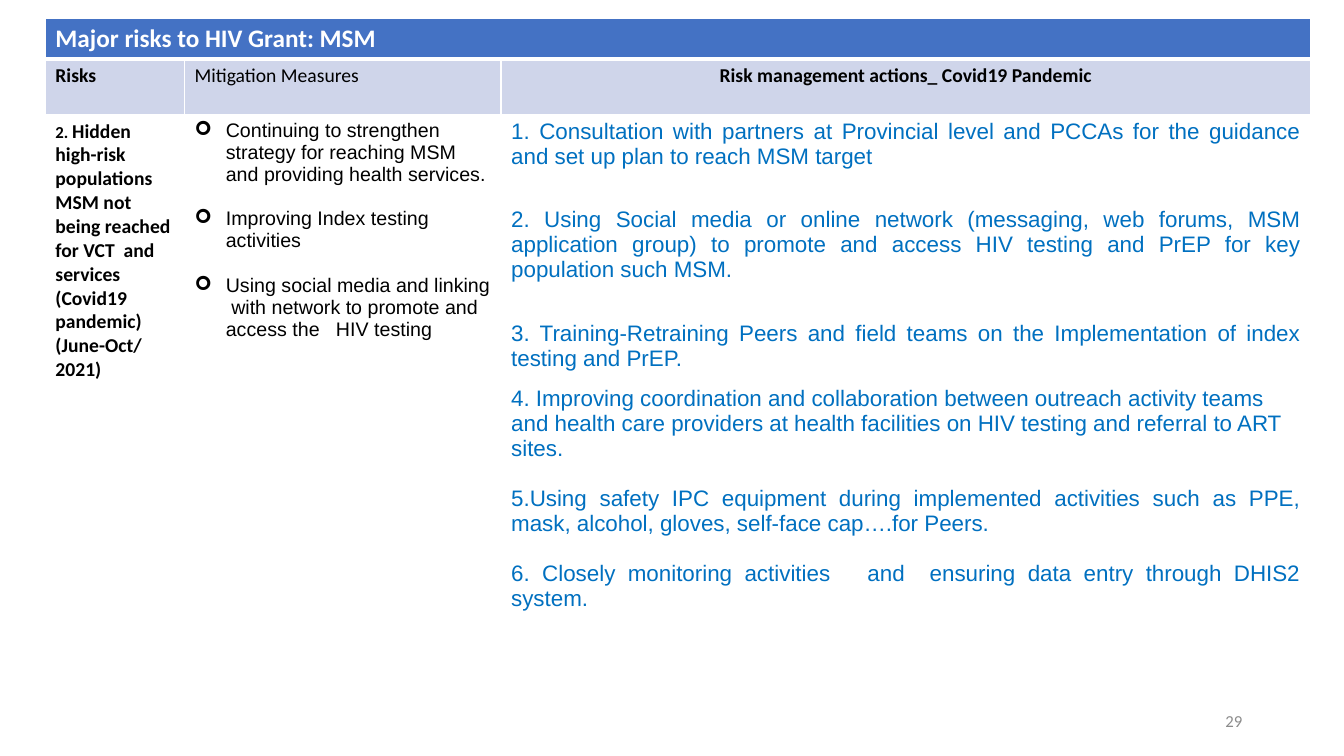
from dataclasses import dataclass
from typing import Optional

from lxml.etree import SubElement
from pptx import Presentation
from pptx.dml.color import RGBColor
from pptx.enum.text import MSO_ANCHOR as Anchor, PP_ALIGN as Align
from pptx.oxml.ns import qn
from pptx.util import Inches, Pt

COLORS = {
    "white": "FFFFFF",
    "black": "000000",
    "title": "4472C4",
    "heading": "CFD5EA",
    "action": "0070C0",
    "number": "8C8C8C",
}


@dataclass
class Line:
    text: str
    size: float = 14
    font: str = "Calibri"
    color: str = "black"
    bold: bool = False
    align: Align = Align.LEFT
    before: float = 0
    bullet: str = ""
    numbered: bool = False
    lead: str = ""  # smaller text in front


@dataclass
class Entry:
    row: int
    col: int
    lines: list[Line]
    fill: Optional[str] = None


def mitigation(text: str, before: float = 0) -> Line:
    return Line(text, font="Arial", before=before, bullet="➢")


def action(text: str, before: float = 0, align: Align = Align.JUSTIFY,
           numbered: bool = False) -> Line:
    return Line(text, 16, "Arial", "action", align=align, before=before, numbered=numbered)


ENTRIES = [
    Entry(0, 0, [Line("Major risks to HIV Grant: MSM", 18, color="white", bold=True)], "title"),
    Entry(1, 0, [Line("Risks", bold=True)], "heading"),
    Entry(1, 1, [Line("Mitigation Measures")], "heading"),
    Entry(1, 2, [Line("Risk management actions_ Covid19 Pandemic", bold=True,
                      align=Align.CENTER)], "heading"),
    Entry(2, 0, [
        Line("Hidden high-risk populations MSM not being reached for VCT  and services "
             "(Covid19 pandemic)", bold=True, lead="2. "),
        Line("(June-Oct/2021)", bold=True),
    ]),
    Entry(2, 1, [
        mitigation("Continuing to strengthen strategy for reaching MSM and providing "
                   "health services."),
        mitigation("Improving Index testing activities", 16),
        mitigation("Using social media and linking  with network to promote and "
                   "access the   HIV testing", 16),
    ]),
    Entry(2, 2, [
        action(" Consultation with partners at Provincial level and PCCAs for the guidance "
               "and set up plan to reach MSM target ", numbered=True),
        action(" Using Social media or online network (messaging, web forums, MSM application "
               "group) to promote and access HIV testing and PrEP for key population "
               "such MSM. ", 27, numbered=True),
        action("3. Training-Retraining Peers and field teams on the Implementation of index "
               "testing and PrEP.", 28.5),
        action("4. Improving coordination and collaboration between outreach activity teams  "
               "and health care providers at health facilities on HIV testing and referral "
               "to ART sites.", 11, Align.LEFT),
        action("5.Using safety IPC equipment during implemented activities such as PPE, mask, "
               "alcohol, gloves, self-face cap….for Peers.", 18),
        action("6. Closely monitoring activities   and  ensuring data entry through DHIS2 "
               "system.", 18),
    ]),
]


def rgb(name: str) -> RGBColor:
    return RGBColor.from_string(COLORS[name])


def add_marker(paragraph, line: Line) -> None:
    props = paragraph._p.get_or_add_pPr()
    if line.bullet:
        props.set("marL", str(Inches(0.31)))
        props.set("indent", str(Inches(-0.31)))
        SubElement(props, qn("a:buFont"), typeface="Wingdings")
        SubElement(props, qn("a:buChar"), char=line.bullet)
    elif line.numbered:
        props.set("marL", "0")
        props.set("indent", "0")
        SubElement(props, qn("a:buFontTx"))
        SubElement(props, qn("a:buAutoNum"), type="arabicPeriod")


def write_lines(frame, lines: list[Line]) -> None:
    frame.text = "\n".join(line.text for line in lines)
    for paragraph, line in zip(frame.paragraphs, lines):
        if line.lead:
            paragraph.text = line.lead
            paragraph.add_run().text = line.text
        paragraph.alignment = line.align
        if line.before:
            paragraph.space_before = Pt(line.before)
        add_marker(paragraph, line)
        for run in paragraph.runs:
            run.font.name = line.font
            run.font.size = Pt(line.size)
            run.font.bold = line.bold
            run.font.color.rgb = rgb(line.color)
        if line.lead:
            paragraph.runs[0].font.size = Pt(12)


def add_borders(cell, bottom: float) -> None:
    props = cell._tc.get_or_add_tcPr()
    for side, width in {"lnL": 1, "lnR": 1, "lnT": 1, "lnB": bottom}.items():
        border = SubElement(props, qn(f"a:{side}"), w=str(Pt(width)))
        SubElement(SubElement(border, qn("a:solidFill")), qn("a:srgbClr"), val=COLORS["white"])


def add_risk_table(slide) -> None:
    widths, heights = [1.38, 3.14, 8.03], [0.39, 0.55, 6.11]
    risks = slide.shapes.add_table(len(heights), len(widths), Inches(0.45), Inches(0.18),
                                   Inches(sum(widths)), Inches(sum(heights))).table
    risks.horz_banding = False
    for column, width in zip(risks.columns, widths):
        column.width = Inches(width)
    for row, height in zip(risks.rows, heights):
        row.height = Inches(height)
    risks.cell(0, 0).merge(risks.cell(0, 2))
    for entry in ENTRIES:
        cell = risks.cell(entry.row, entry.col)
        add_borders(cell, 3 if entry.row == 0 else 1)
        if entry.fill:
            cell.fill.solid()
            cell.fill.fore_color.rgb = rgb(entry.fill)
        else:
            cell.fill.background()
        write_lines(cell.text_frame, entry.lines)


def add_page_number(slide) -> None:
    page = slide.shapes.add_textbox(Inches(9.42), Inches(6.95), Inches(3), Inches(0.4)).text_frame
    page.word_wrap = True
    page.vertical_anchor = Anchor.MIDDLE
    write_lines(page, [Line("29", 12, color="number", align=Align.RIGHT)])


def main() -> None:
    deck = Presentation()
    deck.slide_width, deck.slide_height = Inches(13.33), Inches(7.5)
    slide = deck.slides.add_slide(deck.slide_layouts[6])
    # Risk table
    add_risk_table(slide)
    # Footer
    add_page_number(slide)
    deck.save("out.pptx")


if __name__ == "__main__":
    main()
